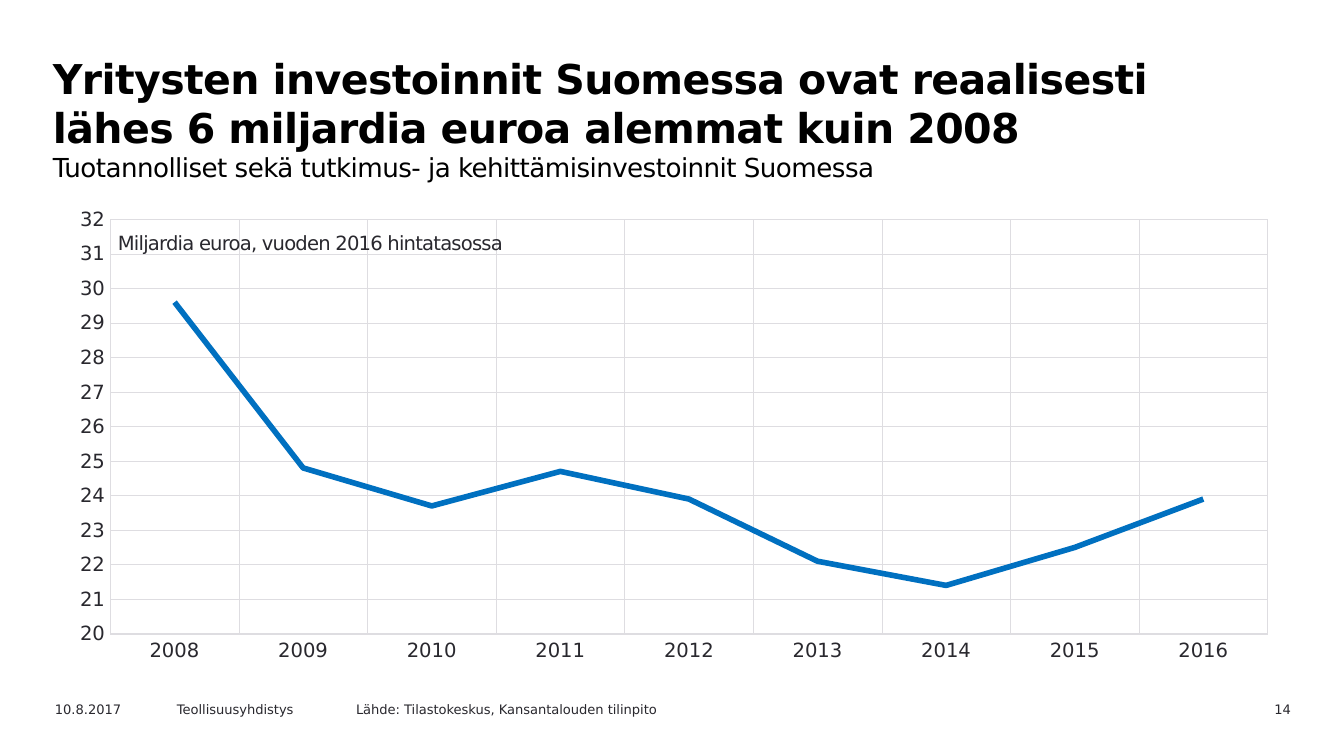
import pptx
import pptx.chart.data
import pptx.dml.color
import pptx.enum.chart
import pptx.enum.text
import pptx.oxml
import pptx.oxml.ns
import pptx.util

PX = 914400 / 134.4  # EMU in one px
FONT = "DejaVu Sans"
INK, GRID, BLUE = "29282E", "DEDDE1", "0070C0"
ALIGN = pptx.enum.text.PP_ALIGN


def px(n):
    return pptx.util.Emu(round(n * PX))


def rgb(value):
    return pptx.dml.color.RGBColor.from_string(value)


def style(font, size, color=INK, bold=False):
    font.name, font.size, font.bold = FONT, pptx.util.Pt(size), bold
    font.color.rgb = rgb(color)


def style_line(line, color, width):
    line.color.rgb = rgb(color)
    line.width = pptx.util.Pt(width)


def track(run, hundredths):
    """Set letter spacing in hundredths of a point."""
    run.font._element.set("spc", str(hundredths))


def set_frame(tf, margins):
    tf.word_wrap = True
    tf.auto_size = pptx.enum.text.MSO_AUTO_SIZE.NONE
    tf.vertical_anchor = pptx.enum.text.MSO_ANCHOR.TOP
    tf.margin_left, tf.margin_top, tf.margin_right, tf.margin_bottom = map(px, margins)


def add_text(slide, box, text, size, margins, align=ALIGN.LEFT, spacing=0):
    tf = slide.shapes.add_textbox(*map(px, box)).text_frame
    set_frame(tf, margins)
    p = tf.paragraphs[0]
    p.alignment = align
    style(p.font, size)
    r = p.add_run()
    r.text = text
    if spacing:
        track(r, spacing)


def add_heading(slide, x, y, w, h):
    sp = slide.shapes.title
    sp.left, sp.top, sp.width, sp.height = map(px, (x, y, w, h))
    set_frame(sp.text_frame, (15, 11, 13, 0))
    p = sp.text_frame.paragraphs[0]
    p.alignment = ALIGN.LEFT
    p.space_before = pptx.util.Pt(0)
    # Bold headline, then a lighter subtitle on its own line
    lines = [
        ("Yritysten investoinnit Suomessa ovat reaalisesti "
         "lähes 6 miljardia euroa alemmat kuin 2008", 22, True),
        ("Tuotannolliset sekä tutkimus- ja kehittämisinvestoinnit Suomessa", 14, False),
    ]
    for i, (text, size, bold) in enumerate(lines):
        if i:
            p.add_line_break()
        r = p.add_run()
        r.text = text
        style(r.font, size, "000000", bold)
        track(r, -30)


def set_plot_area(chart, x, y, w, h):
    """Fix the inner plot area, in fractions of the chart."""
    area = chart._chartSpace.chart.plotArea
    for old in area.findall(pptx.oxml.ns.qn("c:layout")):
        area.remove(old)
    parts = "".join(f'<c:{tag} val="{val}"/>' for tag, val in (
        ("layoutTarget", "inner"), ("xMode", "edge"), ("yMode", "edge"),
        ("x", x), ("y", y), ("w", w), ("h", h)))
    area.insert(0, pptx.oxml.parse_xml(
        f'<c:layout {pptx.oxml.ns.nsdecls("c")}><c:manualLayout>{parts}'
        "</c:manualLayout></c:layout>"))


def add_investment_chart(slide, x, y, w, h):
    data = pptx.chart.data.CategoryChartData()
    data.categories = [str(year) for year in range(2008, 2017)]
    data.add_series("Investoinnit", (29.6, 24.8, 23.7, 24.7, 23.9, 22.1, 21.4, 22.5, 23.9))
    chart = slide.shapes.add_chart(
        pptx.enum.chart.XL_CHART_TYPE.LINE, *map(px, (x, y, w, h)), data).chart
    chart.has_title = chart.has_legend = False
    style(chart.font, 10.5)
    set_plot_area(chart, 0.044, 0.044, 0.938, 0.855)

    # Axes and grid
    for axis in (chart.category_axis, chart.value_axis):
        axis.major_tick_mark = axis.minor_tick_mark = pptx.enum.chart.XL_TICK_MARK.NONE
        axis.has_major_gridlines = True
        style_line(axis.major_gridlines.format.line, GRID, 0.25)
        style(axis.tick_labels.font, 10.5)
    style_line(chart.category_axis.format.line, GRID, 0.75)
    values = chart.value_axis
    values.format.line.fill.background()
    values.minimum_scale, values.maximum_scale, values.major_unit = 20, 32, 1
    values.tick_labels.number_format = "#,##0"
    values.tick_labels.number_format_is_linked = False

    # Series
    chart.plots[0].vary_by_categories = False
    series = chart.plots[0].series[0]
    series.smooth = False
    series.marker.style = pptx.enum.chart.XL_MARKER_STYLE.NONE
    style_line(series.format.line, BLUE, 3)

    # Unit note in the top left of the plot
    add_text(slide, (x + 57, y + 28, 521, 35), "Miljardia euroa, vuoden 2016 hintatasossa",
             10.5, (5, 5, 5, 5), spacing=-40)


def add_footer(slide, x, y, w, h):
    items = [
        (0, 134, "10.8.2017", ALIGN.LEFT),
        (122, 191, "Teollisuusyhdistys", ALIGN.LEFT),
        (301, 437, "Lähde: Tilastokeskus, Kansantalouden tilinpito", ALIGN.LEFT),
        (w - 126, 126, "14", ALIGN.RIGHT),
    ]
    for left, width, text, align in items:
        add_text(slide, (x + left, y, width, h), text, 7, (13, 7, 13, 0), align)


def main():
    prs = pptx.Presentation()
    prs.slide_width, prs.slide_height = px(1344), px(756)
    slide = prs.slides.add_slide(prs.slide_layouts.get_by_name("Title Only"))
    add_heading(slide, 38, 42, 1175, 95)
    add_investment_chart(slide, 56, 198, 1234, 485)
    add_footer(slide, 42, 695, 1262, 24)
    prs.save("out.pptx")


if __name__ == "__main__":
    main()
